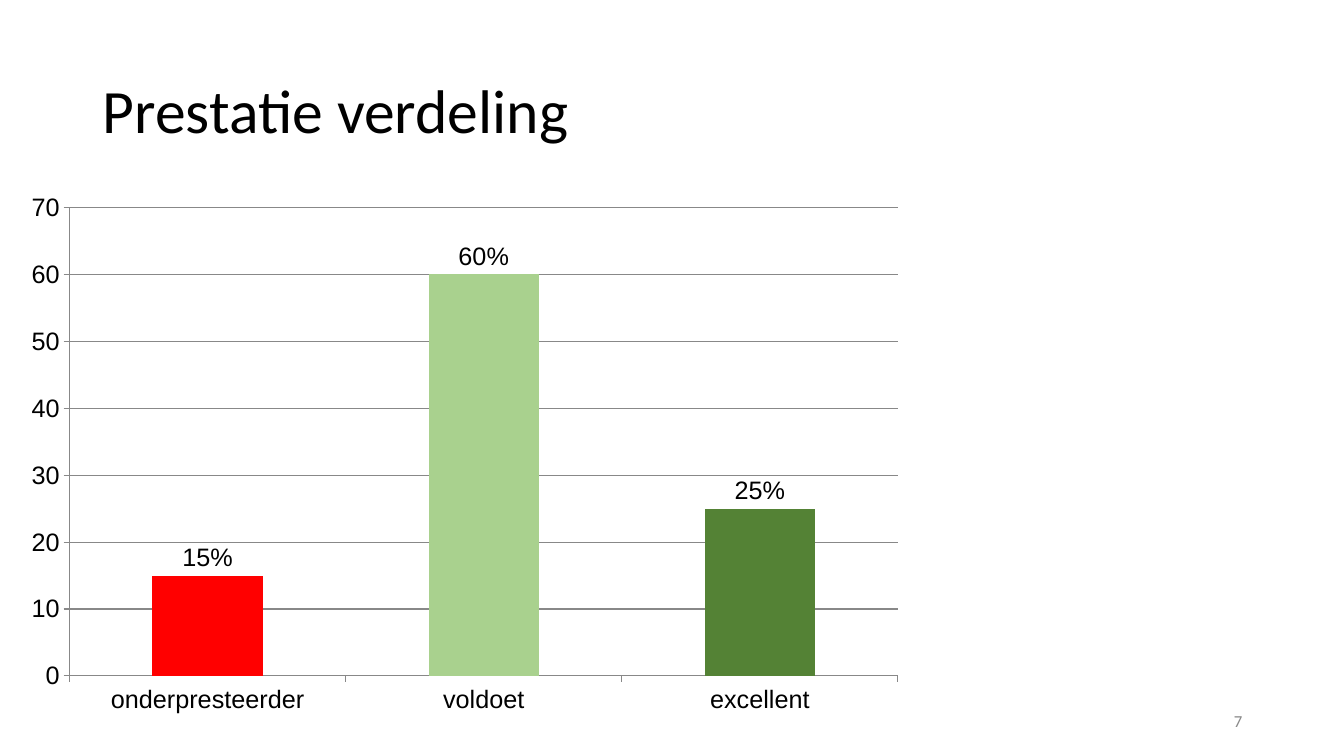
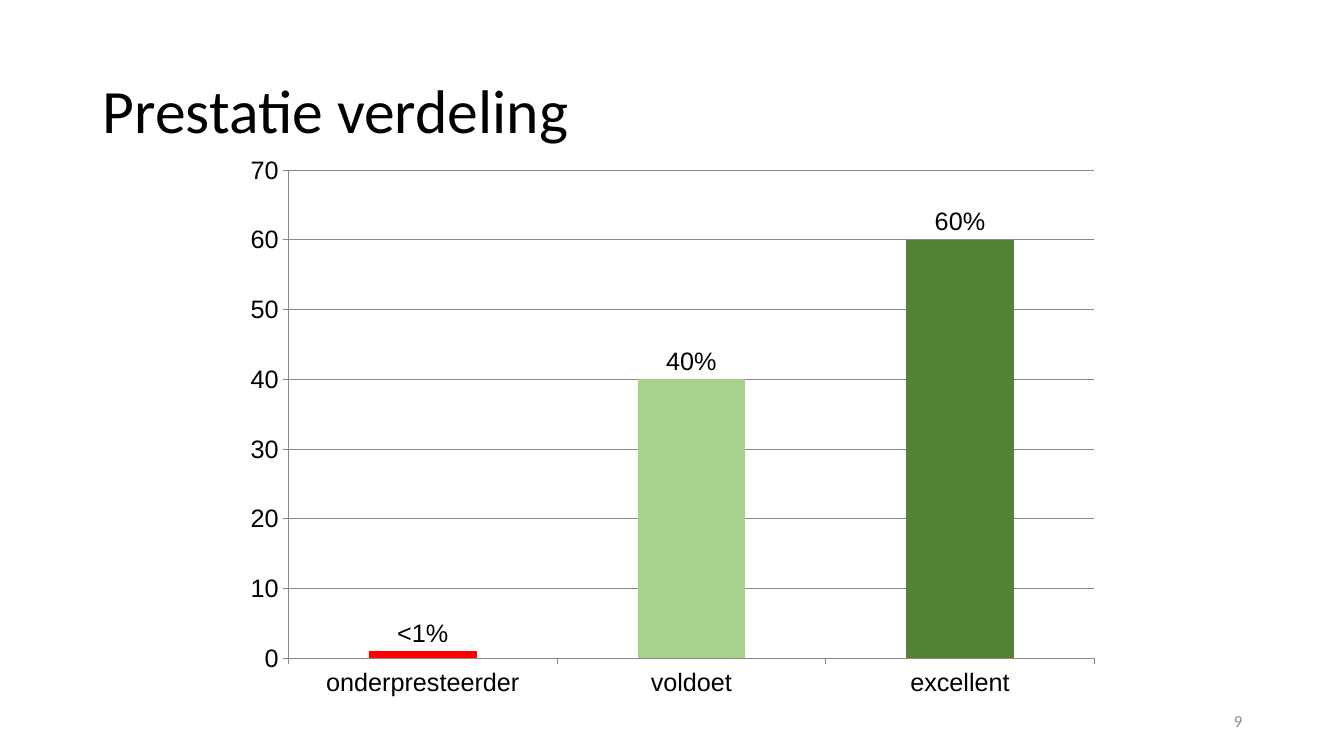
from lxml import etree
from pptx import Presentation
from pptx.chart.data import CategoryChartData
from pptx.dml.color import RGBColor
from pptx.enum.chart import XL_CHART_TYPE, XL_LABEL_POSITION, XL_TICK_MARK
from pptx.enum.text import MSO_ANCHOR, PP_ALIGN
from pptx.oxml import parse_xml
from pptx.util import Inches, Pt

BLACK = RGBColor(0x00, 0x00, 0x00)
GRAY = RGBColor(0x88, 0x88, 0x88)
RED = RGBColor(0xFF, 0x00, 0x00)
LIGHT_GREEN = RGBColor(0xA9, 0xD1, 0x8E)
DARK_GREEN = RGBColor(0x54, 0x82, 0x35)

CATEGORIES = ["onderpresteerder", "voldoet", "excellent"]
BAR_COLORS = [RED, LIGHT_GREEN, DARK_GREEN]
CHART_NS = "http://schemas.openxmlformats.org/drawingml/2006/chart"
PLOT_AREA = {"x": 0.075, "y": 0.047, "w": 0.893, "h": 0.877}


def set_font(font, name="Calibri", size=18, color=BLACK):
    font.name = name
    font.size = Pt(size)
    font.color.rgb = color


def write(tf, text, align=PP_ALIGN.LEFT, spacing=None, **style):
    """Fill a text frame with one formatted paragraph."""
    tf.word_wrap = True
    tf.vertical_anchor = MSO_ANCHOR.MIDDLE
    p = tf.paragraphs[0]
    p.alignment = align
    p.line_spacing = spacing
    r = p.add_run()
    r.text = text
    set_font(r.font, **style)


def place_plot(chart):
    """Fix the inner plot area as fractions of the chart."""
    plot_area = chart.plots[0]._element.getparent()
    for old in plot_area.findall(f"{{{CHART_NS}}}layout"):
        plot_area.remove(old)
    layout = parse_xml(f'<c:layout xmlns:c="{CHART_NS}"><c:manualLayout/></c:layout>')
    settings = [("layoutTarget", "inner"), ("xMode", "edge"), ("yMode", "edge")]
    for tag, value in settings + list(PLOT_AREA.items()):
        etree.SubElement(layout[0], f"{{{CHART_NS}}}{tag}").set("val", str(value))
    plot_area.insert(0, layout)


class Deck:
    def __init__(self):
        self.prs = Presentation()
        self.prs.slide_width = Inches(13.33)
        self.prs.slide_height = Inches(7.5)
        self.s = None

    def add_slide(self, title, number):
        self.s = self.prs.slides.add_slide(self.prs.slide_layouts[5])
        sp = self.s.shapes.title
        sp.left, sp.top = Inches(0.92), Inches(0.4)
        sp.width, sp.height = Inches(11.5), Inches(1.45)
        write(sp.text_frame, title, spacing=0.9, size=44)
        # Slide number
        sp = self.s.shapes.add_textbox(Inches(9.42), Inches(6.95), Inches(3), Inches(0.4))
        write(sp.text_frame, number, align=PP_ALIGN.RIGHT, size=12, color=GRAY)

    def add_column_chart(self, box, values, labels):
        data = CategoryChartData()
        data.categories = CATEGORIES
        data.add_series("Series 1", values)
        chart = self.s.shapes.add_chart(
            XL_CHART_TYPE.COLUMN_CLUSTERED, *map(Inches, box), data).chart
        chart.has_legend = False
        chart.has_title = False
        set_font(chart.font, name="Arial")
        place_plot(chart)

        # Axes
        axis = chart.value_axis
        axis.minimum_scale, axis.maximum_scale, axis.major_unit = 0, 70, 10
        axis.has_major_gridlines = True
        for line in (axis.format.line, axis.major_gridlines.format.line,
                     chart.category_axis.format.line):
            line.color.rgb = GRAY
            line.width = Pt(0.75)
        for axis in (chart.value_axis, chart.category_axis):
            axis.major_tick_mark = XL_TICK_MARK.OUTSIDE

        # Columns and their labels
        plot = chart.plots[0]
        plot.gap_width = 150
        plot.vary_by_categories = False
        for i, (color, text) in enumerate(zip(BAR_COLORS, labels)):
            point = plot.series[0].points[i]
            point.format.fill.solid()
            point.format.fill.fore_color.rgb = color
            label = point.data_label
            r = label.text_frame.paragraphs[0].add_run()
            r.text = text
            set_font(r.font, name="Arial")
            label.position = XL_LABEL_POSITION.OUTSIDE_END


def main():
    deck = Deck()
    slides = [
        ("7", (0, 1.81, 9.2, 5.3), (15, 60, 25), ("15%", "60%", "25%")),
        ("9", (2.19, 1.43, 8.95, 5.52), (1, 40, 60), ("<1%", "40%", "60%")),
    ]
    for number, box, values, labels in slides:
        deck.add_slide("Prestatie verdeling", number)
        deck.add_column_chart(box, values, labels)
    deck.prs.save("out.pptx")


if __name__ == "__main__":
    main()
